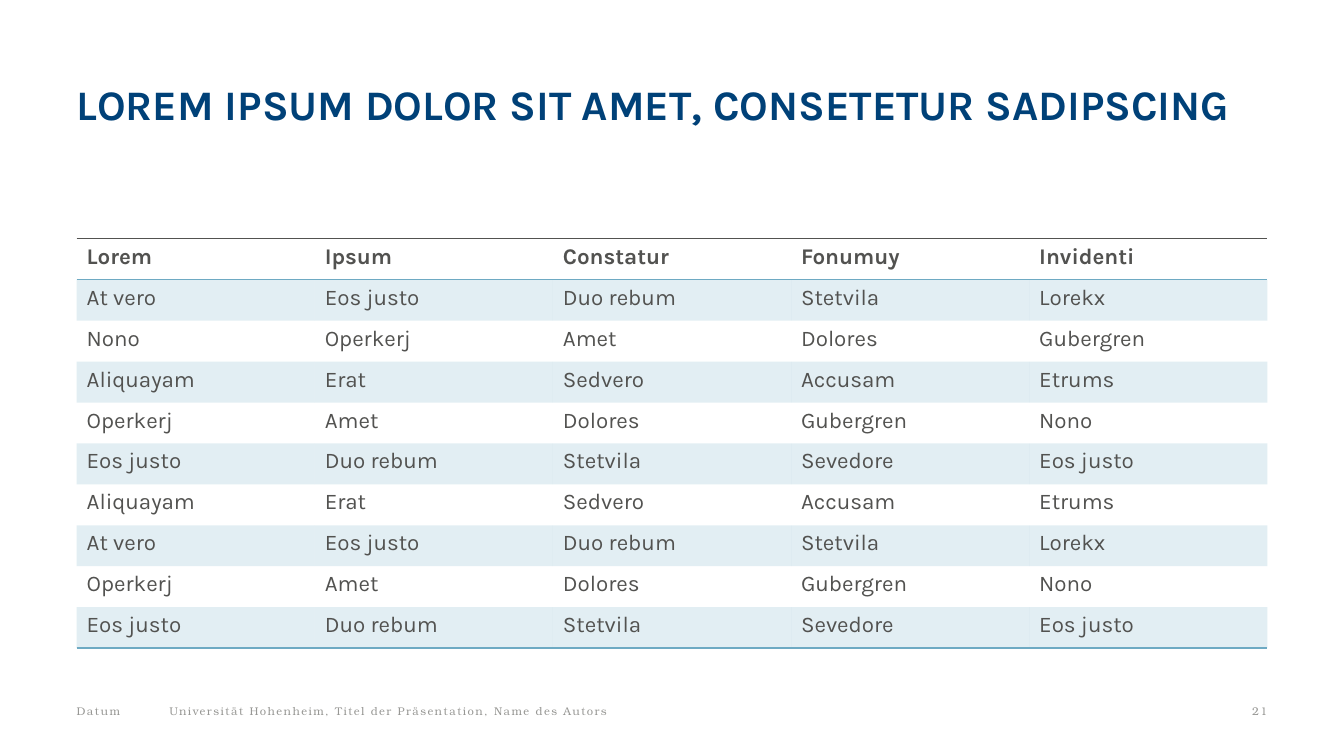
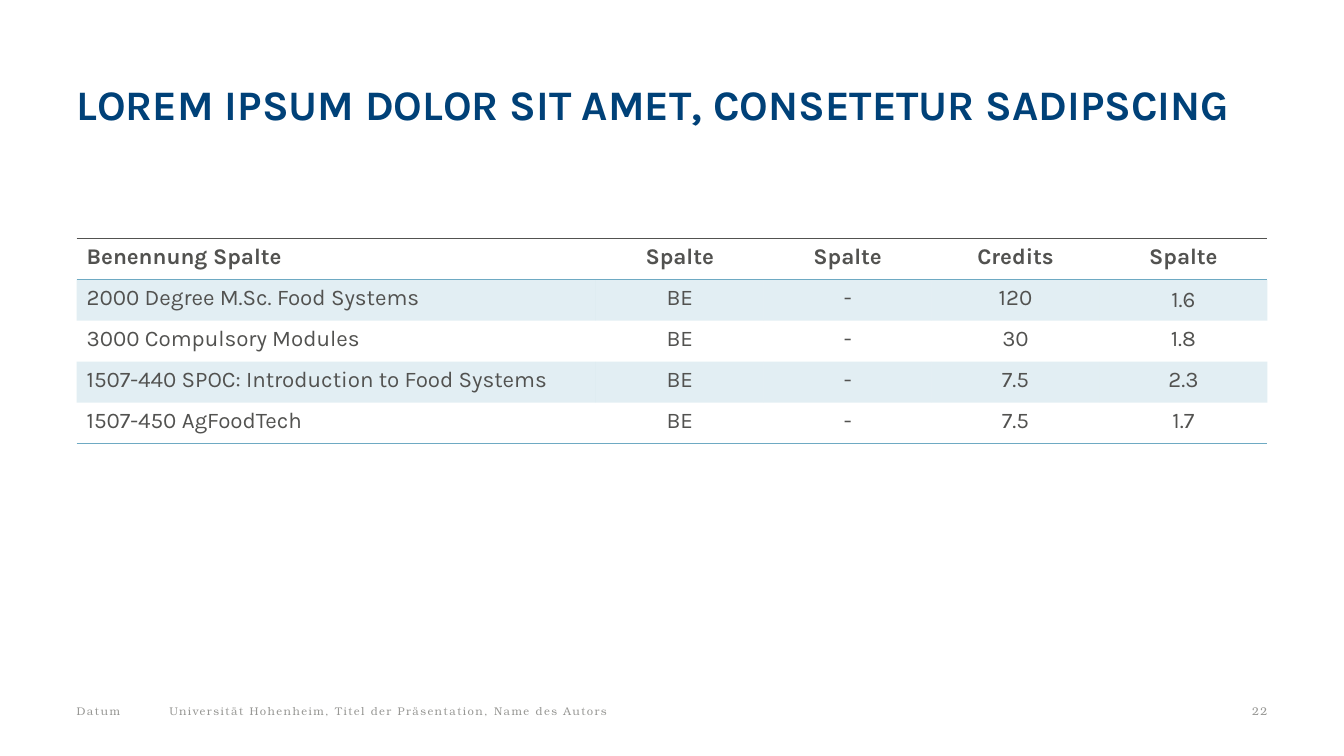
import lxml.etree
import pptx
import pptx.dml.color
import pptx.enum.text
import pptx.oxml.ns
import pptx.util

Inches = pptx.util.Inches
Pt = pptx.util.Pt
RGBColor = pptx.dml.color.RGBColor
PP_ALIGN = pptx.enum.text.PP_ALIGN
MSO_ANCHOR = pptx.enum.text.MSO_ANCHOR
qn = pptx.oxml.ns.qn

# Shared style
NAVY = RGBColor(0x00, 0x41, 0x78)
BLUE = RGBColor(0x6E, 0xAA, 0xC3)
DARK = RGBColor(0x52, 0x52, 0x50)
GREY = RGBColor(0x98, 0x98, 0x95)
SANS = "Karla"
SERIF = "TeX Gyre Bonum"
NO_STYLE = "{2D5ABB26-0587-4C30-8999-92F81FD0307C}"

# Shared layout
LEFT, WIDTH = Inches(0.76), Inches(11.81)
TITLE_BOX = (LEFT, Inches(0.84), WIDTH, Inches(1.14))
FOOTER_BOX = (LEFT, Inches(6.94), WIDTH, Inches(0.24))
TABLE_TOP = Inches(2.37)
ROW_HEIGHT = Inches(4.06) // 10

TITLE = "LOREM IPSUM DOLOR SIT AMET, CONSETETUR SADIPSCING"
FOOTER = "Universität Hohenheim, Titel der Präsentation, Name des Autors"

NAMES = [
    ["Lorem", "Ipsum", "Constatur", "Fonumuy", "Invidenti"],
    ["At vero", "Eos justo", "Duo rebum", "Stetvila", "Lorekx"],
    ["Nono", "Operkerj", "Amet", "Dolores", "Gubergren"],
    ["Aliquayam", "Erat", "Sedvero", "Accusam", "Etrums"],
    ["Operkerj", "Amet", "Dolores", "Gubergren", "Nono"],
    ["Eos justo", "Duo rebum", "Stetvila", "Sevedore", "Eos justo"],
    ["Aliquayam", "Erat", "Sedvero", "Accusam", "Etrums"],
    ["At vero", "Eos justo", "Duo rebum", "Stetvila", "Lorekx"],
    ["Operkerj", "Amet", "Dolores", "Gubergren", "Nono"],
    ["Eos justo", "Duo rebum", "Stetvila", "Sevedore", "Eos justo"],
]
MODULES = [
    ["Benennung Spalte", "Spalte", "Spalte", "Credits", "Spalte"],
    ["2000 Degree M.Sc. Food Systems", "BE", "-", "120", "1.6"],
    ["3000 Compulsory Modules", "BE", "-", "30", "1.8"],
    ["1507-440 SPOC: Introduction to Food Systems", "BE", "-", "7.5", "2.3"],
    ["1507-450 AgFoodTech", "BE", "-", "7.5", "1.7"],
]


def format_run(r, font, size, color, bold=False):
    r.font.name = font
    r.font.size = Pt(size)
    r.font.color.rgb = color
    r.font.bold = bold


def set_margins(tf, x, y):
    tf.margin_left = tf.margin_right = x
    tf.margin_top = tf.margin_bottom = y


def add_title(slide, text, box):
    sp = slide.shapes.title
    sp.left, sp.top, sp.width, sp.height = box
    tf = sp.text_frame
    tf.text = text
    tf.word_wrap = True
    tf.auto_size = pptx.enum.text.MSO_AUTO_SIZE.NONE
    tf.vertical_anchor = MSO_ANCHOR.TOP
    set_margins(tf, 0, 0)
    p = tf.paragraphs[0]
    p.alignment = PP_ALIGN.LEFT
    p.line_spacing = 0.9
    format_run(p.runs[0], SANS, 30, NAVY, True)


def add_footer(slide, number, box):
    left, top, width, height = box
    small = Inches(0.78)
    parts = [
        (FOOTER, Inches(0.92), Inches(10.38), PP_ALIGN.LEFT),
        ("Datum", 0, small, PP_ALIGN.LEFT),
        (str(number), width - small, small, PP_ALIGN.RIGHT),
    ]
    for text, offset, part_width, align in parts:
        sp = slide.shapes.add_textbox(left + offset, top, part_width, height)
        tf = sp.text_frame
        tf.text = text
        tf.word_wrap = True
        set_margins(tf, 0, Inches(0.05))
        p = tf.paragraphs[0]
        p.alignment = align
        r = p.runs[0]
        format_run(r, SERIF, 8, GREY)
        r.font._element.set("spc", "100")  # letter spacing of 1 pt


def add_border(cell, side, color):
    """Draw a 1 pt rule on one side; call for the top before the bottom."""
    tc_pr = cell._tc.get_or_add_tcPr()
    ln = lxml.etree.Element(qn("a:" + side), w=str(Pt(1)))
    fill = lxml.etree.SubElement(ln, qn("a:solidFill"))
    lxml.etree.SubElement(fill, qn("a:srgbClr"), val=str(color))
    # Borders come before the cell fill
    tc_pr.insert(len(tc_pr.findall(qn("a:lnT"))), ln)


def shade(cell):
    cell.fill.solid()
    cell.fill.fore_color.rgb = BLUE
    color = cell._tc.tcPr.find(".//" + qn("a:srgbClr"))
    lxml.etree.SubElement(color, qn("a:alpha"), val="20000")


def add_ruled_table(slide, rows, left, top, col_widths, align):
    """Table with a ruled header row and every second row shaded."""
    frame = slide.shapes.add_table(len(rows), len(col_widths), left, top,
                                   sum(col_widths), ROW_HEIGHT * len(rows))
    table = frame.table
    table.horz_banding = False
    table._tbl.tblPr.find(qn("a:tableStyleId")).text = NO_STYLE
    for column, width in zip(table.columns, col_widths):
        column.width = width
    for i, row in enumerate(rows):
        for j, text in enumerate(row):
            cell = table.cell(i, j)
            cell.text = text
            p = cell.text_frame.paragraphs[0]
            p.alignment = align if j else PP_ALIGN.LEFT
            format_run(p.runs[0], SANS, 16, DARK, i == 0)
            if i % 2:
                shade(cell)
            else:
                cell.fill.background()
            if i == 0:
                add_border(cell, "lnT", DARK)
            if i in (0, len(rows) - 1):
                add_border(cell, "lnB", BLUE)
    return table


def add_table_slide(prs, number, rows, col_widths, align):
    slide = prs.slides.add_slide(prs.slide_layouts[5])
    add_footer(slide, number, FOOTER_BOX)
    add_title(slide, TITLE, TITLE_BOX)
    return add_ruled_table(slide, rows, LEFT, TABLE_TOP, col_widths, align)


def main():
    prs = pptx.Presentation()
    prs.slide_width, prs.slide_height = Inches(13.33), Inches(7.5)

    # Five equal columns
    add_table_slide(prs, 21, NAMES, [WIDTH // 5] * 5, PP_ALIGN.LEFT)

    # Wide first column, four centred ones
    first = Inches(5.15)
    widths = [first] + [(WIDTH - first) // 4] * 4
    table = add_table_slide(prs, 22, MODULES, widths, PP_ALIGN.CENTER)
    table.cell(1, 4).vertical_anchor = MSO_ANCHOR.MIDDLE

    prs.save("out.pptx")


if __name__ == "__main__":
    main()
